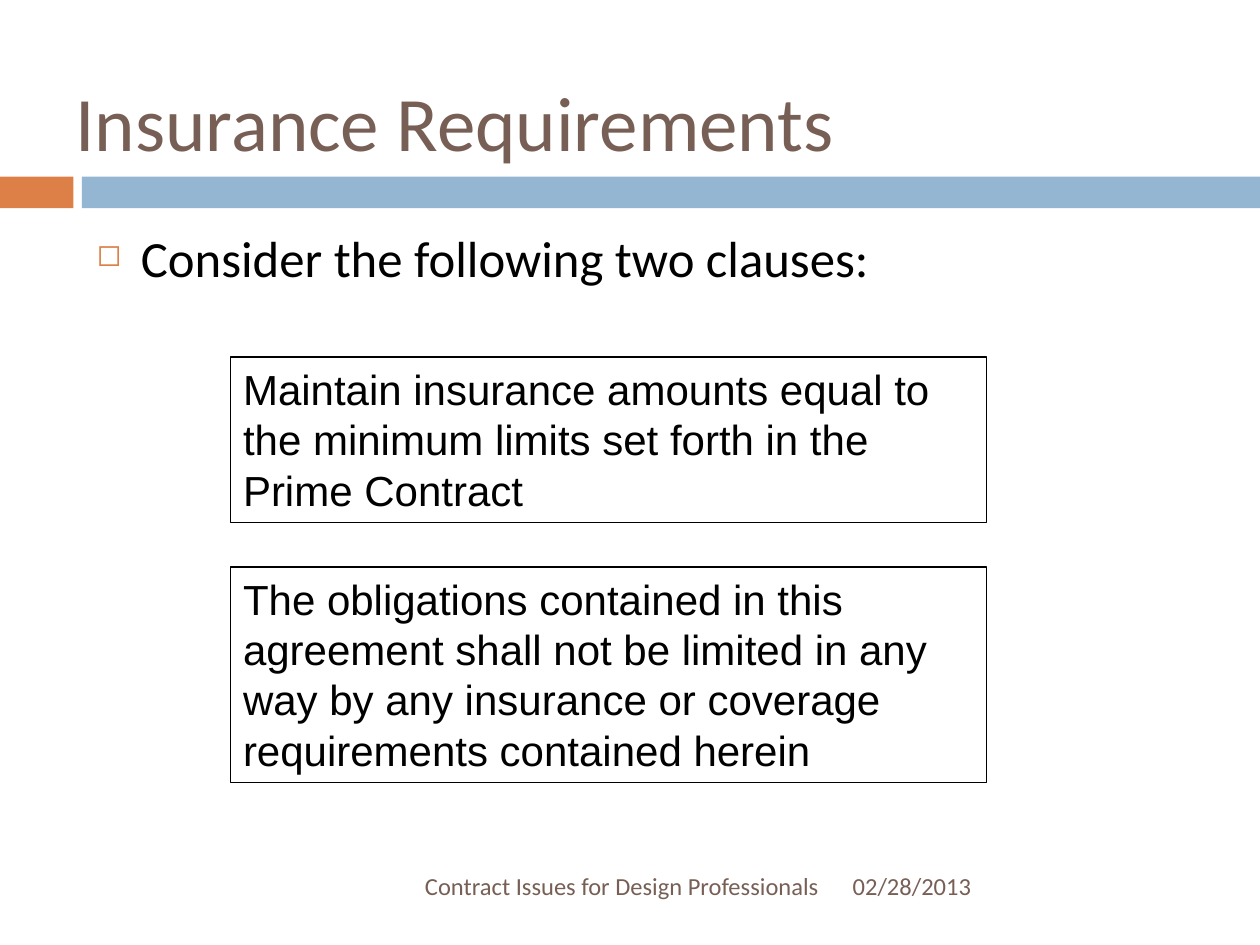
from dataclasses import dataclass

from lxml.etree import SubElement
from pptx import Presentation
from pptx.dml.color import RGBColor
from pptx.enum.shapes import MSO_SHAPE
from pptx.enum.text import MSO_ANCHOR, MSO_AUTO_SIZE, PP_ALIGN
from pptx.oxml.ns import qn
from pptx.util import Cm, Pt

BROWN, ORANGE, BLUE, BLACK = "775F55", "DD8047", "94B6D2", "000000"


@dataclass(frozen=True)
class Box:
    left: float
    top: float
    width: float
    height: float

    def lengths(self) -> tuple:
        return Cm(self.left), Cm(self.top), Cm(self.width), Cm(self.height)


@dataclass(frozen=True)
class Band:
    box: Box
    color: str


@dataclass(frozen=True)
class Words:
    text: str
    box: Box
    size: int
    color: str
    font: str = "Calibri"
    align: PP_ALIGN = PP_ALIGN.LEFT
    anchor: MSO_ANCHOR = MSO_ANCHOR.MIDDLE


BANDS = [
    Band(Box(0, 3.56, 1.48, 0.64), ORANGE),
    Band(Box(1.65, 3.56, 23.75, 0.64), BLUE),
]
TITLE = Words("Insurance Requirements", Box(1.27, 0.84, 22.86, 3.18), 44, BROWN)
FOOTERS = [
    Words("02/28/2013", Box(16.94, 17.35, 7.42, 1.02), 14, BROWN),
    Words("Contract Issues for Design Professionals",
          Box(1.7, 17.35, 15.06, 1.02), 14, BROWN, align=PP_ALIGN.RIGHT),
]
PROMPT = Words("Consider the following two clauses:",
               Box(1.7, 4.45, 22.66, 12.5), 29, BLACK, anchor=MSO_ANCHOR.TOP)
CLAUSES = [
    Words("Maintain insurance amounts equal to the minimum limits set forth "
          "in the Prime Contract",
          Box(4.65, 7.2, 15.24, 3.33), 24, BLACK, "Arial", anchor=MSO_ANCHOR.TOP),
    Words("The obligations contained in this agreement shall not be limited "
          "in any way by any insurance or coverage requirements contained herein",
          Box(4.65, 11.43, 15.24, 4.34), 24, BLACK, "Arial", anchor=MSO_ANCHOR.TOP),
]


def rgb(color: str) -> RGBColor:
    return RGBColor.from_string(color)


def write(shape, words: Words):
    frame = shape.text_frame
    frame.word_wrap = True
    frame.vertical_anchor = words.anchor
    frame.text = words.text
    paragraph = frame.paragraphs[0]
    paragraph.alignment = words.align
    paragraph.font.size = Pt(words.size)
    paragraph.font.name = words.font
    paragraph.font.color.rgb = rgb(words.color)
    return paragraph


def add_band(slide, band: Band) -> None:
    bar = slide.shapes.add_shape(MSO_SHAPE.RECTANGLE, *band.box.lengths())
    bar.shadow.inherit = False
    bar.fill.solid()
    bar.fill.fore_color.rgb = rgb(band.color)
    bar.line.fill.background()


def add_words(slide, words: Words):
    return write(slide.shapes.add_textbox(*words.box.lengths()), words)


def add_clause(slide, clause: Words) -> None:
    frame = slide.shapes.add_shape(MSO_SHAPE.RECTANGLE, *clause.box.lengths())
    frame.shadow.inherit = False
    frame.fill.background()
    frame.line.color.rgb = rgb(BLACK)
    frame.line.width = Pt(0.75)
    write(frame, clause)
    frame.text_frame.auto_size = MSO_AUTO_SIZE.SHAPE_TO_FIT_TEXT


def add_bullet(paragraph, symbol: str, color: str, percent: int) -> None:
    paragraph.space_before = Pt(7)
    properties = paragraph._p.get_or_add_pPr()
    indent = Cm(0.89)
    properties.set("marL", str(indent))
    properties.set("indent", str(-indent))
    bullet_color = SubElement(properties, qn("a:buClr"))
    SubElement(bullet_color, qn("a:srgbClr"), val=color)
    SubElement(properties, qn("a:buSzPct"), val=str(percent * 1000))
    SubElement(properties, qn("a:buChar"), char=symbol)
    for late in properties.findall(qn("a:defRPr")):
        properties.append(late)


def main() -> None:
    deck = Presentation()
    deck.slide_width, deck.slide_height = Cm(25.4), Cm(19.05)
    slide = deck.slides.add_slide(deck.slide_layouts[5])
    title = slide.shapes.title
    title.left, title.top, title.width, title.height = TITLE.box.lengths()
    write(title, TITLE)
    for band in BANDS:
        add_band(slide, band)
    for footer in FOOTERS:
        add_words(slide, footer)
    add_bullet(add_words(slide, PROMPT), "◻", ORANGE, 60)
    for clause in CLAUSES:
        add_clause(slide, clause)
    deck.save("out.pptx")


if __name__ == "__main__":
    main()
